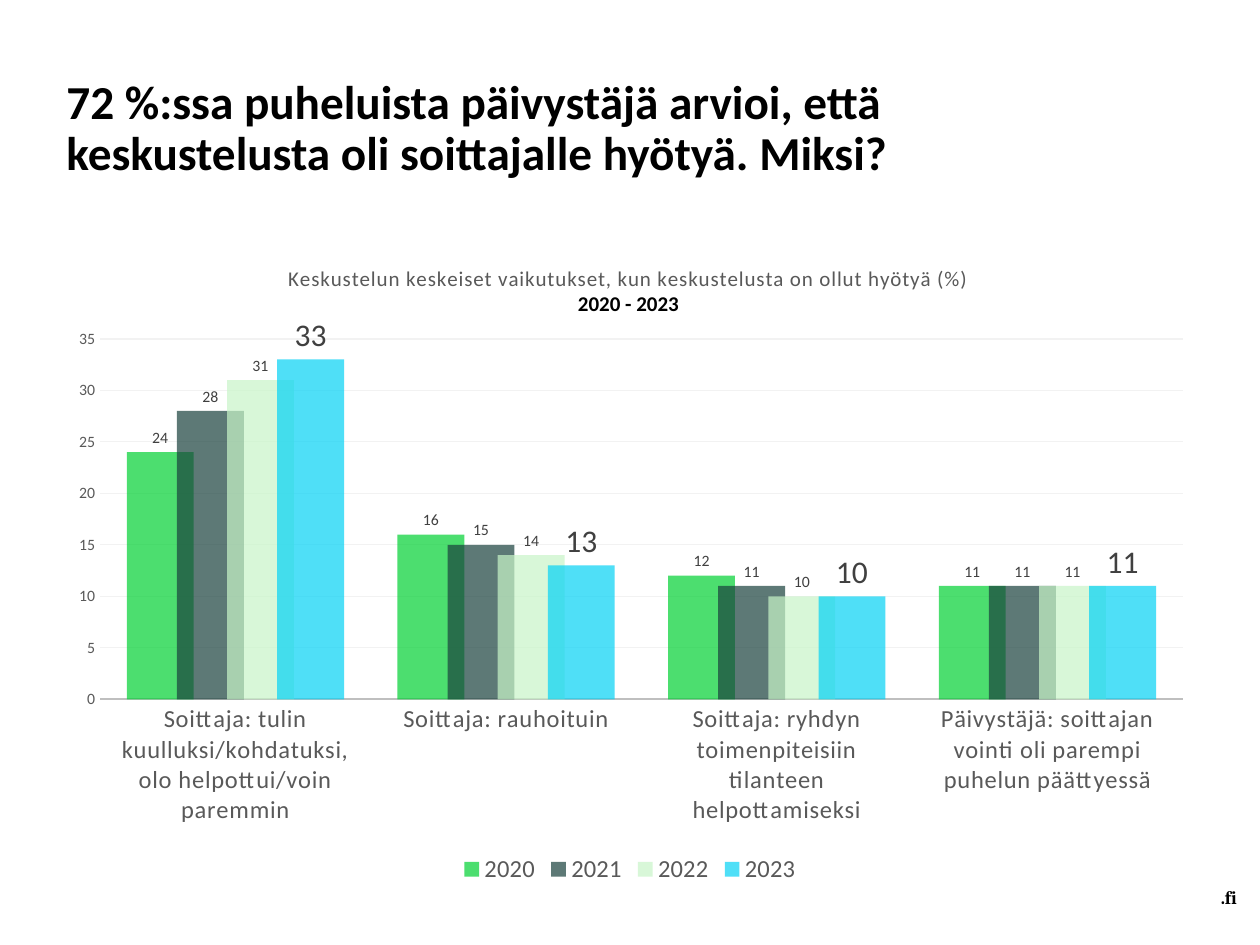
from lxml.etree import SubElement
from pptx import Presentation
from pptx.chart.data import CategoryChartData
from pptx.dml.color import RGBColor
from pptx.enum.chart import XL_CHART_TYPE, XL_LABEL_POSITION, XL_LEGEND_POSITION, XL_TICK_MARK
from pptx.enum.text import MSO_ANCHOR
from pptx.oxml import parse_xml
from pptx.oxml.ns import nsdecls, qn
from pptx.util import Cm, Pt

BLACK = RGBColor(0, 0, 0)
GREY = RGBColor(0x59, 0x59, 0x59)
DARK = RGBColor(0x40, 0x40, 0x40)
AXIS = RGBColor(0xBF, 0xBF, 0xBF)
GRID = RGBColor(0xF2, 0xF2, 0xF2)
GREEN = RGBColor(0x00, 0xD0, 0x32)
PINE = RGBColor(0x19, 0x41, 0x3D)
MINT = RGBColor(0xC8, 0xF5, 0xC8)
CYAN = RGBColor(0x05, 0xD2, 0xF5)

GROUPS = [
    "Soittaja: tulin kuulluksi/kohdatuksi, olo helpottui/voin paremmin",
    "Soittaja: rauhoituin",
    "Soittaja: ryhdyn toimenpiteisiin tilanteen helpottamiseksi",
    "Päivystäjä: soittajan vointi oli parempi puhelun päättyessä",
]
YEARS = [
    ("2020", (24, 16, 12, 11), GREEN, 9),
    ("2021", (28, 15, 11, 11), PINE, 9),
    ("2022", (31, 14, 10, 11), MINT, 9),
    ("2023", (33, 13, 10, 11), CYAN, 18),
]


def style(font, size, color=GREY, bold=False, name="Calibri"):
    font.size, font.bold, font.name = Pt(size), bold, name
    font.color.rgb = color


def write(para, text, space=None, **form):
    run = para.add_run()
    run.text = text
    style(run.font, **form)
    if space:
        run._r.get_or_add_rPr().set("spc", str(space))


def text_box(slide, box, text, wrap=True, anchor=MSO_ANCHOR.TOP, lines=1.0, **form):
    frame = slide.shapes.add_textbox(*map(Cm, box)).text_frame
    frame.word_wrap, frame.vertical_anchor = wrap, anchor
    para = frame.paragraphs[0]
    para.line_spacing = lines
    write(para, text, **form)


def layout(parent, index, **parts):
    old = parent.find(qn("c:layout"))
    if old is not None:
        parent.remove(old)
    body = "".join(f'<c:{key} val="{val}"/>' for key, val in parts.items())
    parent.insert(index, parse_xml(
        f'<c:layout {nsdecls("c")}><c:manualLayout>{body}</c:manualLayout></c:layout>'))


def chart_title(chart):
    frame = chart.chart_title.text_frame
    write(frame.paragraphs[0], "Keskustelun keskeiset vaikutukset, kun keskustelusta on ollut hyötyä (%)",
          size=12, space=50)
    write(frame.add_paragraph(), "2020 - 2023", size=12, color=BLACK, bold=True)
    chart.chart_title.include_in_layout = False
    layout(chart.chart_title._element, 1, xMode="edge", yMode="edge", x=0.2, y=0.04)


def axes(chart):
    cat, val = chart.category_axis, chart.value_axis
    for axis, size in ((cat, 14), (val, 9)):
        axis.major_tick_mark = axis.minor_tick_mark = XL_TICK_MARK.NONE
        style(axis.tick_labels.font, size)
    for props in cat._element.iter(qn("a:defRPr")):
        props.set("spc", "30")
    cat.format.line.color.rgb, cat.format.line.width = AXIS, Pt(1.25)
    val.format.line.fill.background()
    val.minimum_scale, val.maximum_scale, val.major_unit = 0, 35, 5
    grid = val.major_gridlines.format.line
    grid.color.rgb, grid.width = GRID, Pt(0.75)


def columns(plot):
    plot.gap_width, plot.overlap, plot.vary_by_categories = 80, 25, False
    for bars, (_, _, color, size) in zip(plot.series, YEARS):
        bars.format.fill.solid()
        bars.format.fill.fore_color.rgb = color
        tint = bars._element.spPr.find(".//" + qn("a:srgbClr"))
        SubElement(tint, qn("a:alpha")).set("val", "70000")
        labels = bars.data_labels
        labels.show_value, labels.position = True, XL_LABEL_POSITION.OUTSIDE_END
        style(labels.font, size, DARK)


def effects(slide, box):
    data = CategoryChartData()
    data.categories = GROUPS
    for name, values, _, _ in YEARS:
        data.add_series(name, values)
    chart = slide.shapes.add_chart(XL_CHART_TYPE.COLUMN_CLUSTERED, *map(Cm, box), data).chart
    style(chart.font, 10, BLACK)
    chart_title(chart)
    axes(chart)
    columns(chart.plots[0])
    chart.has_legend = True
    chart.legend.position = XL_LEGEND_POSITION.BOTTOM
    chart.legend.include_in_layout = False
    style(chart.legend.font, 14)
    area = chart._chartSpace.find(".//" + qn("c:plotArea"))
    layout(area, 0, layoutTarget="inner", xMode="edge", yMode="edge", x=0.04, y=0.16, w=0.94, h=0.55)


def main():
    deck = Presentation()
    deck.slide_width, deck.slide_height = Cm(25.4), Cm(19.05)
    slide = deck.slides.add_slide(deck.slide_layouts[6])
    text_box(slide, (24.36, 17.73, 0.86, 1.14), ".fi", wrap=False,
             size=10.5, color=BLACK, bold=True, name="Cambria")
    text_box(slide, (1.09, 1.12, 20.02, 3),
             "72 %:ssa puheluista päivystäjä arvioi, että keskustelusta oli soittajalle hyötyä. Miksi?",
             anchor=MSO_ANCHOR.MIDDLE, lines=0.9, size=27, color=BLACK, bold=True)
    effects(slide, (1.09, 4.72, 23.22, 13.21))
    deck.save("out.pptx")


if __name__ == "__main__":
    main()
